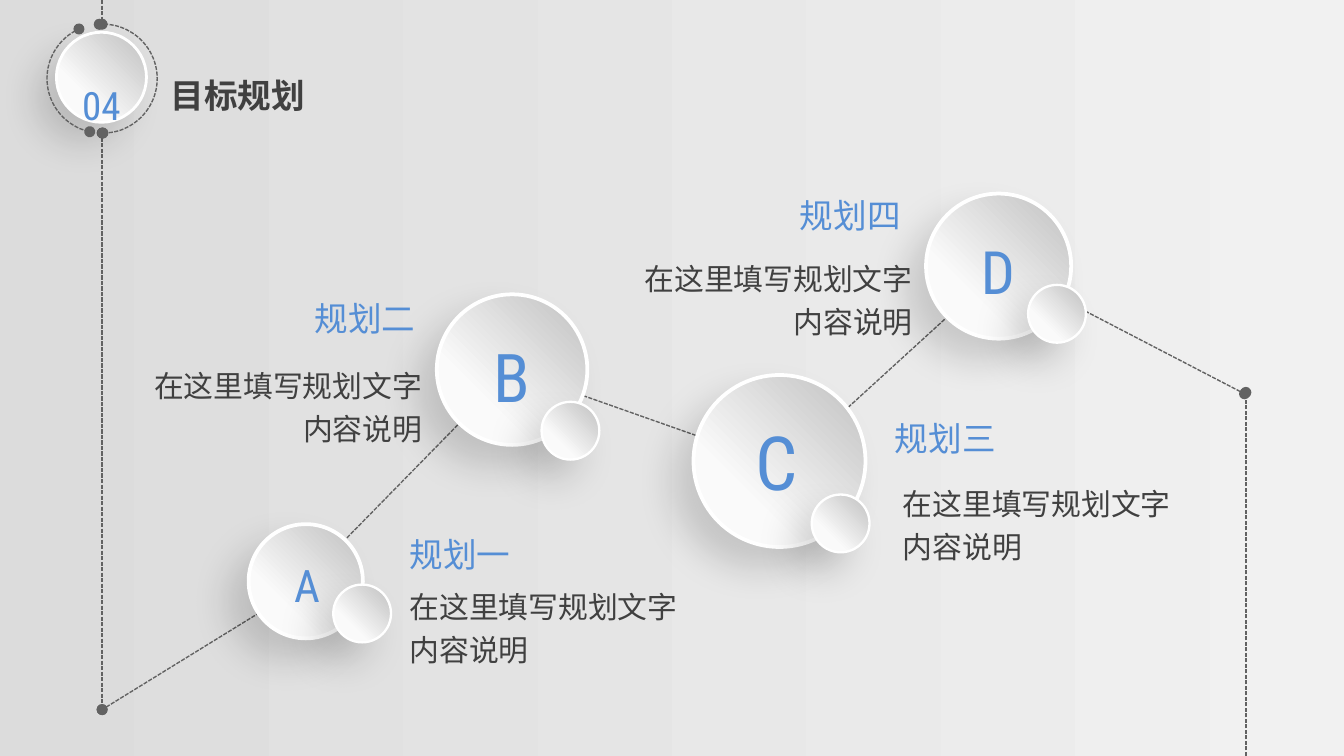
from lxml import etree
from pptx import Presentation
from pptx.dml.color import RGBColor
from pptx.enum.dml import MSO_LINE
from pptx.enum.shapes import MSO_CONNECTOR, MSO_SHAPE
from pptx.enum.text import MSO_ANCHOR, MSO_AUTO_SIZE, PP_ALIGN
from pptx.oxml.ns import qn
from pptx.util import Inches, Pt

OVAL, ARC = MSO_SHAPE.OVAL, MSO_SHAPE.ARC
STRAIGHT, DASH = MSO_CONNECTOR.STRAIGHT, MSO_LINE.SQUARE_DOT
LEFT, MID, RIGHT = PP_ALIGN.LEFT, PP_ALIGN.CENTER, PP_ALIGN.RIGHT
TOP, MIDDLE = MSO_ANCHOR.TOP, MSO_ANCHOR.MIDDLE
FIT = MSO_AUTO_SIZE.SHAPE_TO_FIT_TEXT

WIDTH = 10
HEIGHT = WIDTH * 9 / 16
BLUE, DARK, GREY, WHITE = "558ED5", "404040", "626262", "FFFFFF"
LATIN, SANS, HEAD = "Roboto Condensed", "Noto Sans CJK SC", "Noto Sans CJK JP"
BODY = "在这里填写规划文字内容说明"
DOT = 0.43

# disc and small dot: left, top (and size); letter box; heading and body: left, top
PLANS = [
    dict(letter="A", size=24, disc=(1.85, 3.9, 0.85), dot=(2.48, 4.35),
         box=(2.09, 4.1, 0.37, 0.5), head="规划一", at=(2.95, 3.92),
         body=(2.95, 4.28), align=LEFT),
    dict(letter="B", size=36, disc=(3.25, 2.19, 1.12), dot=(4.03, 2.99),
         box=(3.57, 2.44, 0.48, 0.71), head="规划二", at=(1.29, 2.17),
         body=(0.88, 2.63), align=RIGHT),
    dict(letter="C", size=40, disc=(5.16, 2.79, 1.28), dot=(6.04, 3.68),
         box=(5.52, 3.04, 0.51, 0.77), head="规划三", at=(6.56, 3.06),
         body=(6.62, 3.51), align=LEFT),
    dict(letter="D", size=32, disc=(6.89, 1.44, 1.08), dot=(7.65, 2.12),
         box=(7.2, 1.69, 0.45, 0.64), head="规划四", at=(4.9, 1.4),
         body=(4.53, 1.84), align=RIGHT),
]

# start, end, which ends carry a dot
LINES = [
    ((9.26, 2.93), (7.43, 1.98), ("headEnd", "tailEnd")),
    ((0.76, 5.28), (2.27, 4.35), ("headEnd", "tailEnd")),
    ((2.27, 4.32), (3.81, 2.75), ("headEnd", "tailEnd")),
    ((5.83, 3.47), (3.79, 2.75), ("headEnd", "tailEnd")),
    ((7.66, 1.8), (5.83, 3.47), ("headEnd", "tailEnd")),
    ((0.76, 0.99), (0.76, 5.28), ("headEnd", "tailEnd")),
    ((9.27, HEIGHT), (9.27, 2.92), ("tailEnd",)),
    ((0.76, 0), (0.76, 0.18), ("tailEnd",)),
]

# left, start and end adjustment, mirrored
ARCS = [(0.35, 176.63, 46.57, True), (0.36, 159.78, 53.9, False)]


def rgb(code):
    return RGBColor.from_string(code)


def sub(parent, tag, **attrs):
    node = etree.SubElement(parent, qn("a:" + tag))
    for key, value in attrs.items():
        node.set(key, str(value))
    return node


def shade(fill, stops, angle):
    """Gradient fill; the angle runs counter-clockwise."""
    fill.gradient()
    fill.gradient_angle = angle
    for stop, (pos, code) in zip(fill.gradient_stops, stops):
        stop.position = pos
        stop.color.rgb = rgb(code)


def dash(shape, ends):
    """Thin dashed line with round ends."""
    line = shape.line
    line.color.rgb = rgb(GREY)
    line.width = Pt(0.75)
    line.dash_style = DASH
    ln = shape._element.spPr.find(qn("a:ln"))
    for end in ends:
        sub(ln, end, type="oval")


def link(shapes, start, end, ends):
    line = shapes.add_connector(STRAIGHT, *map(Inches, start + end))
    dash(line, ends)
    sub(line._element.spPr, "effectLst")


def disc(shapes, left, top, size, width):
    """Shaded white-rimmed circle with a soft shadow."""
    shape = shapes.add_shape(OVAL, *map(Inches, (left, top, size, size)))
    shade(shape.fill, [(0, "BFBFBF"), (0.7, "FAFAFA")], 225)
    shape.line.color.rgb = rgb(WHITE)
    shape.line.width = Pt(width)
    shape.shadow.inherit = False
    effects = shape._element.spPr.find(qn("a:effectLst"))
    shadow = sub(effects, "outerShdw", blurRad=Pt(20), dist=Pt(15),
                 dir=135 * 60000, algn="tr", rotWithShape=0)
    sub(sub(shadow, "srgbClr", val="000000"), "alpha", val=15000)


def arc(shapes, left, start, end, mirrored):
    shape = shapes.add_shape(ARC, *map(Inches, (left, 0.18, 0.81, 0.81)))
    for i, value in enumerate((start, end)):
        shape.adjustments[i] = value
    if mirrored:
        shape._element.spPr.find(qn("a:xfrm")).set("flipH", "1")
    shape.fill.background()
    shape.shadow.inherit = False
    dash(shape, ("headEnd", "tailEnd"))


def write(shapes, words, box, size, face, color, align=LEFT, wrap=True,
          anchor=TOP, space=None, bold=None):
    frame = shapes.add_textbox(*map(Inches, box)).text_frame
    para = frame.paragraphs[0]
    run = para.add_run()
    run.text = words
    run.font.color.rgb = rgb(color)
    formats = [
        (frame, dict(word_wrap=wrap, auto_size=FIT, vertical_anchor=anchor)),
        (para, dict(alignment=align, line_spacing=space)),
        (run.font, dict(size=Pt(size), name=face, bold=bold)),
    ]
    for target, values in formats:
        for key, value in values.items():
            setattr(target, key, value)
    sub(run._r.get_or_add_rPr(), "ea", typeface=face)
    return run


def main():
    deck = Presentation()
    deck.slide_width, deck.slide_height = Inches(WIDTH), Inches(HEIGHT)
    slide = deck.slides.add_slide(deck.slide_layouts[6])
    shapes = slide.shapes
    shade(slide.background.fill, [(0, "DCDCDC"), (1, "F1F1F1")], 0)

    for line in LINES:
        link(shapes, *line)
    for plan in PLANS:
        disc(shapes, *plan["disc"], 2)
    for plan in PLANS:
        disc(shapes, *plan["dot"], DOT, 1.25)

    badge = shapes.add_group_shape().shapes
    disc(badge, 0.42, 0.24, 0.67, 1.5)
    for part in ARCS:
        arc(badge, *part)
    number = write(badge, "04", (0.48, 0.29, 0.55, 0.63), 36, LATIN, BLUE,
                   MID, False, MIDDLE, 1.5)
    number._r.get_or_add_rPr().set("baseline", "12000")
    write(shapes, "目标规划", (1.17, 0.51, 1.21, 0.4), 18, SANS, DARK,
          wrap=False, bold=True)

    for plan in PLANS:
        align = plan["align"]
        write(shapes, plan["letter"], plan["box"], plan["size"], LATIN, BLUE,
              MID, False, MIDDLE)
        write(shapes, plan["head"], plan["at"] + (1.9, 0.42), 18, HEAD, BLUE,
              align)
        write(shapes, BODY, plan["body"] + (2.36, 0.75), 16, SANS, DARK,
              align, space=1.2)
    deck.save("out.pptx")


if __name__ == "__main__":
    main()
